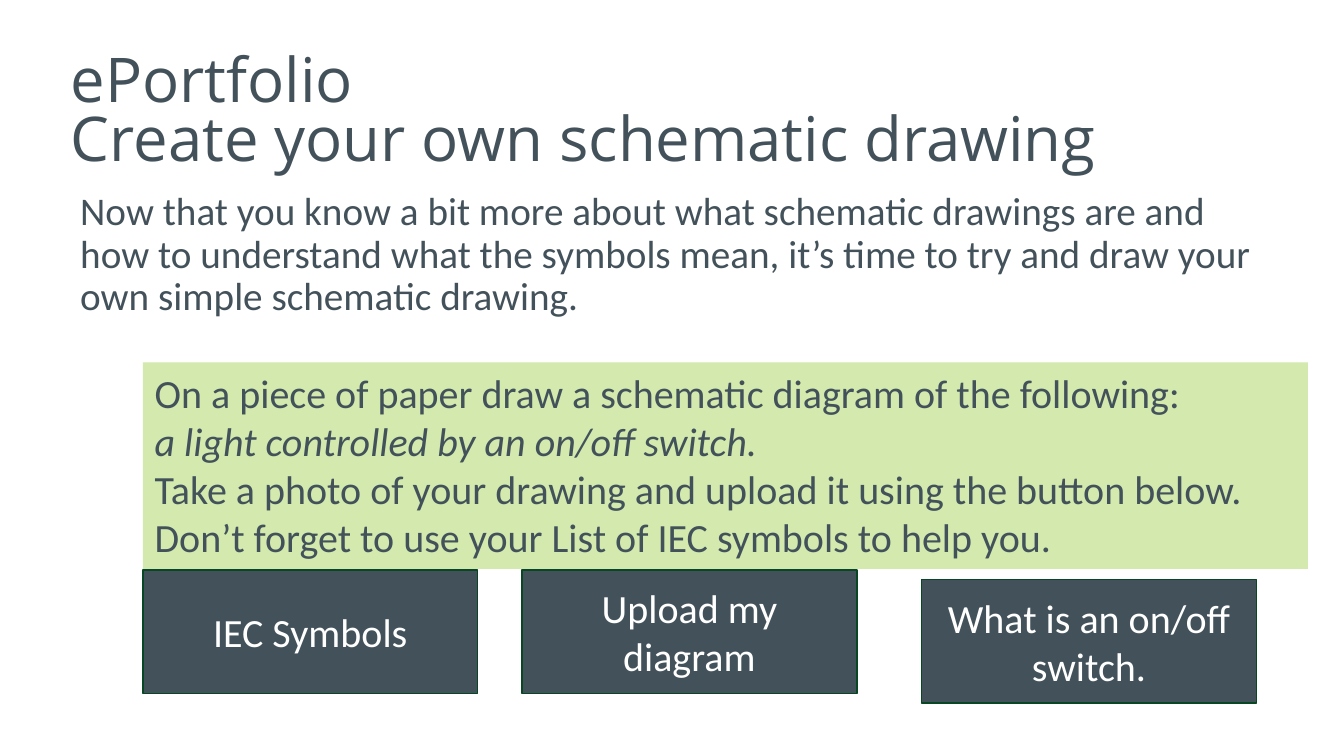
from dataclasses import dataclass

from pptx import Presentation
from pptx.dml.color import RGBColor
from pptx.enum.shapes import MSO_SHAPE
from pptx.enum.text import MSO_ANCHOR, MSO_AUTO_SIZE, PP_ALIGN
from pptx.util import Inches, Pt

SLATE = RGBColor(0x43, 0x52, 0x5A)
LIME = RGBColor(0xD3, 0xE9, 0xAD)
FOREST = RGBColor(0x09, 0x47, 0x24)
WHITE = RGBColor(0xFF, 0xFF, 0xFF)

# Grid of 112 columns by 63 rows
presentation = Presentation()
presentation.slide_width = Inches(11.2)
presentation.slide_height = Inches(6.3)
COLUMN = presentation.slide_width / 112
ROW = presentation.slide_height / 63


@dataclass(frozen=True)
class Area:
    left: float
    top: float
    width: float
    height: float

    def box(self) -> tuple[int, int, int, int]:
        return (round(self.left * COLUMN), round(self.top * ROW),
                round(self.width * COLUMN), round(self.height * ROW))


@dataclass(frozen=True)
class Button:
    label: str
    left: float
    top: float


BUTTON_WIDTH, BUTTON_HEIGHT = 27.9, 10.3
BUTTONS = [
    Button("IEC Symbols", 11.9, 47.5),
    Button("Upload my diagram", 43.5, 47.5),
    Button("What is an on/off switch.", 76.8, 48.3),
]
TASK = [
    "On a piece of paper draw a schematic diagram of the following:",
    "a light controlled by an on/off switch.",
    "Take a photo of your drawing and upload it using the button below. "
    "Don’t forget to use your List of IEC symbols to help you.",
]


def write(frame, lines: list[str], size: float, color: RGBColor = SLATE,
          font: str = "Calibri", align: PP_ALIGN = PP_ALIGN.LEFT,
          anchor: MSO_ANCHOR = MSO_ANCHOR.TOP, spacing: float = 1.0) -> None:
    frame.text = "\n".join(lines)
    frame.word_wrap = True
    frame.auto_size = MSO_AUTO_SIZE.NONE
    frame.vertical_anchor = anchor
    for paragraph in frame.paragraphs:
        paragraph.alignment = align
        paragraph.line_spacing = spacing
        paragraph.font.name = font
        paragraph.font.size = Pt(size)
        paragraph.font.color.rgb = color


def add_panel(slide, area: Area, fill: RGBColor, line: RGBColor | None = None):
    panel = slide.shapes.add_shape(MSO_SHAPE.RECTANGLE, *area.box())
    panel.shadow.inherit = False
    panel.fill.solid()
    panel.fill.fore_color.rgb = fill
    if line is None:
        panel.line.fill.background()
    else:
        panel.line.color.rgb = line
        panel.line.width = Pt(1)
    return panel


def add_button(slide, button: Button) -> None:
    area = Area(button.left, button.top, BUTTON_WIDTH, BUTTON_HEIGHT)
    panel = add_panel(slide, area, SLATE, FOREST)
    write(panel.text_frame, [button.label], 24, WHITE,
          align=PP_ALIGN.CENTER, anchor=MSO_ANCHOR.MIDDLE)


def main() -> None:
    slide = presentation.slides.add_slide(presentation.slide_layouts[5])

    # Title
    title = slide.shapes.title
    title.left, title.top, title.width, title.height = Area(4.9, 3.4, 96.6, 12.2).box()
    write(title.text_frame, ["ePortfolio\vCreate your own schematic drawing"], 37,
          font="Open Sans", anchor=MSO_ANCHOR.MIDDLE, spacing=0.8)

    # Introduction
    introduction = slide.shapes.add_textbox(*Area(5.7, 15.5, 101.5, 10.3).box())
    write(introduction.text_frame, [
        "Now that you know a bit more about what schematic drawings are and how to "
        "understand what the symbols mean, it’s time to try and draw your own simple "
        "schematic drawing."], 23.5, spacing=0.9)

    # Task
    task = add_panel(slide, Area(11.9, 30.2, 97.1, 17.2), LIME)
    write(task.text_frame, TASK, 24)
    task.text_frame.paragraphs[1].font.italic = True

    # Buttons
    for button in BUTTONS:
        add_button(slide, button)

    presentation.save("out.pptx")


if __name__ == "__main__":
    main()
